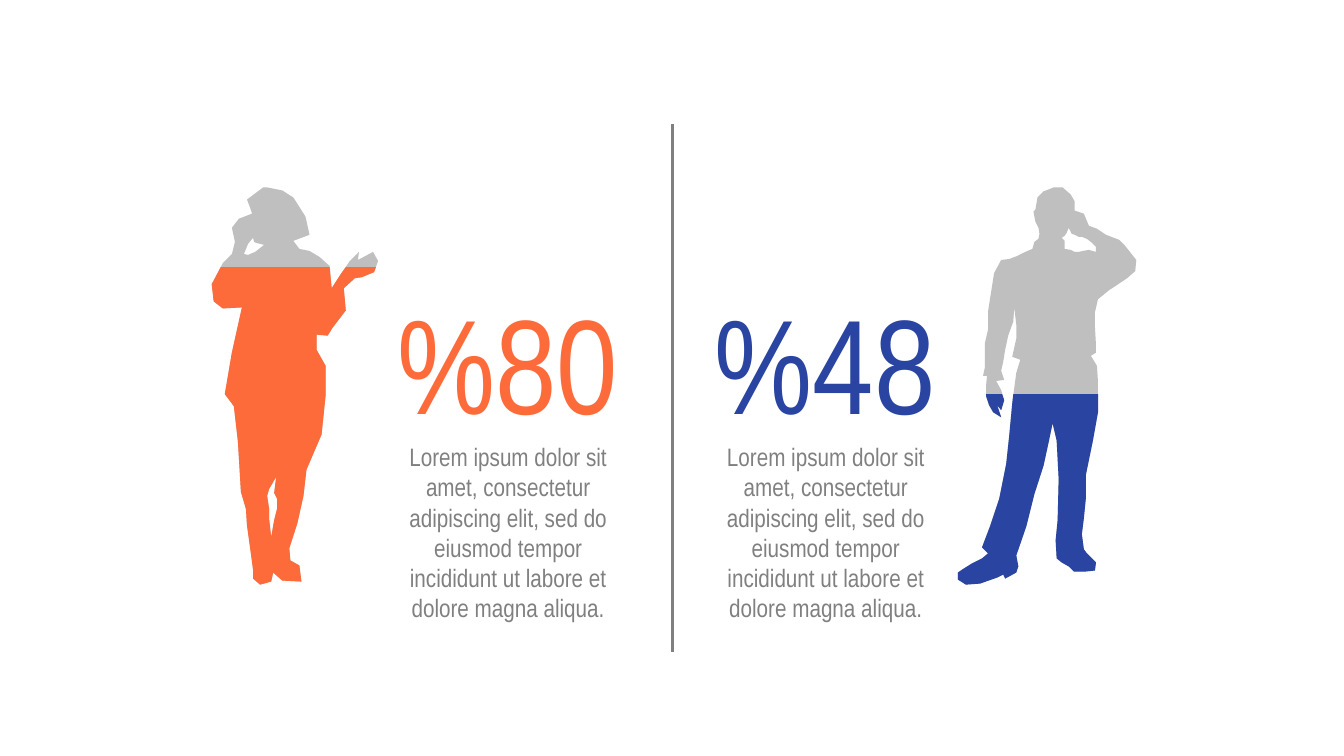
import pptx
import pptx.dml.color
import pptx.enum.shapes
import pptx.enum.text
import pptx.oxml
import pptx.util
from pptx.util import Inches

ORANGE = pptx.dml.color.RGBColor(0xFE, 0x6B, 0x3A)
BLUE = pptx.dml.color.RGBColor(0x29, 0x44, 0xA1)
SILVER = pptx.dml.color.RGBColor(0xBF, 0xBF, 0xBF)
GREY = pptx.dml.color.RGBColor(0x80, 0x80, 0x80)
FONT = "Arial Narrow"
OUTLINE_UNIT = Inches(0.01)
CAPTION = ("Lorem ipsum dolor sit amet, consectetur adipiscing elit, sed do "
           "eiusmod tempor incididunt ut labore et dolore magna aliqua.")

WOMAN_BODY = [
    (210, 282), (212, 299), (221, 306), (240, 305), (230, 350), (223, 391),
    (232, 403), (236, 438), (239, 488), (244, 505), (245, 521), (249, 550),
    (251, 565), (251, 574), (258, 580), (269, 577), (271, 568), (280, 576),
    (299, 577), (297, 561), (288, 556), (287, 544), (295, 519), (301, 492),
    (304, 466), (319, 431), (323, 392), (323, 363), (314, 347), (314, 332),
    (325, 333), (330, 325), (343, 308), (341, 286), (352, 276), (359, 275),
    (371, 270)]
WOMAN_TOP = [
    (375, 259), (370, 250), (355, 258), (356, 250), (347, 259), (338, 272),
    (329, 286), (327, 264), (317, 255), (307, 249), (297, 247), (291, 239),
    (307, 233), (303, 215), (291, 196), (280, 189), (265, 186), (261, 186),
    (245, 198), (248, 206), (250, 212), (237, 217), (230, 226), (233, 240),
    (230, 252), (221, 261)]
WOMAN_CUT = [(373, 265), (343, 265), (338, 272), (329, 286), (327, 265), (219, 265)]
WOMAN_LEG_GAP = [
    (274, 473), (272, 489), (275, 495), (275, 504), (272, 516), (269, 533),
    (268, 524), (267, 515), (267, 505), (265, 492), (267, 485)]
WOMAN_ARM_GAP = [
    (251, 236), (252, 240), (254, 241), (262, 243), (253, 250), (246, 253),
    (242, 252), (244, 247), (246, 242)]

MAN_LEGS = [
    (1089, 409), (1084, 437), (1077, 471), (1077, 494), (1075, 514), (1073, 530),
    (1075, 545), (1078, 549), (1087, 558), (1086, 566), (1077, 567), (1065, 567),
    (1060, 562), (1053, 558), (1048, 554), (1047, 536), (1049, 516), (1050, 475),
    (1048, 437), (1044, 420), (1040, 439), (1035, 462), (1026, 490), (1018, 522),
    (1008, 551), (1010, 562), (1008, 568), (997, 574), (995, 570), (989, 573),
    (972, 579), (958, 580), (950, 575), (950, 568), (956, 564), (964, 559),
    (974, 554), (980, 549), (974, 543), (982, 522), (991, 495), (998, 460),
    (1001, 432), (1004, 400)]
MAN_SIDE = [
    (1008, 370), (1012, 357), (1004, 354), (1008, 336), (1008, 322), (1006, 305),
    (1005, 319), (1000, 333), (997, 347), (995, 359), (993, 368), (996, 377),
    (988, 378), (993, 387)]
MAN_HAND = [(996, 397), (993, 407), (989, 402), (993, 414), (985, 409), (981, 402), (978, 393)]
MAN_TOP = [
    (978, 383), (979, 373), (975, 373), (977, 364), (977, 354), (977, 340),
    (980, 327), (980, 309), (986, 271), (993, 258), (1001, 257), (1009, 254),
    (1017, 250), (1024, 247), (1026, 240), (1030, 237), (1031, 232), (1030, 226),
    (1027, 220), (1025, 210), (1027, 208), (1028, 202), (1029, 196), (1035, 190),
    (1045, 186), (1054, 186), (1062, 193), (1066, 200), (1066, 209), (1075, 212),
    (1080, 224), (1088, 227), (1097, 233), (1110, 238), (1116, 244), (1127, 258),
    (1126, 269), (1118, 276), (1100, 288), (1089, 297), (1086, 310), (1086, 324),
    (1087, 341), (1087, 350), (1082, 353), (1088, 363), (1089, 378)]
MAN_ARM_GAP = [
    (1060, 226), (1058, 231), (1056, 234), (1053, 236), (1056, 239), (1056, 247),
    (1062, 248), (1066, 250), (1070, 250), (1074, 249), (1080, 248), (1087, 250),
    (1087, 245), (1082, 240), (1078, 237), (1073, 235), (1070, 235), (1066, 233),
    (1063, 232)]


def write_text(text_frame, text, *, size, color, anchor, side_inset=0.1):
    text_frame.word_wrap = True
    text_frame.auto_size = pptx.enum.text.MSO_AUTO_SIZE.SHAPE_TO_FIT_TEXT
    text_frame.vertical_anchor = anchor
    text_frame.margin_left = text_frame.margin_right = Inches(side_inset)
    paragraph = text_frame.paragraphs[0]
    paragraph.alignment = pptx.enum.text.PP_ALIGN.CENTER
    run = paragraph.add_run()
    run.text = text
    run.font.name = FONT
    run.font.size = pptx.util.Pt(size)
    run.font.color.rgb = color


class SlideBuilder:
    def __init__(self, slide):
        self.shapes = slide.shapes

    def silhouette(self, color, *contours):
        first, *others = contours
        builder = self.shapes.build_freeform(*first[0], scale=OUTLINE_UNIT)
        builder.add_line_segments(first[1:], close=True)
        for contour in others:
            builder.move_to(*contour[0])
            builder.add_line_segments(contour[1:], close=True)
        shape = builder.convert_to_shape()
        shape.shadow.inherit = False
        shape.fill.solid()
        shape.fill.fore_color.rgb = color
        shape.line.fill.background()

    def text(self, left, top, width, height, text, **text_format):
        box = self.shapes.add_textbox(Inches(left), Inches(top), Inches(width), Inches(height))
        write_text(box.text_frame, text, **text_format)

    def divider(self, x, top, bottom):
        connector = self.shapes.add_connector(
            pptx.enum.shapes.MSO_CONNECTOR.STRAIGHT,
            Inches(x), Inches(top), Inches(x), Inches(bottom))
        connector.line.color.rgb = GREY
        connector.line.width = pptx.util.Pt(1.5)
        properties = connector._element.spPr
        properties.append(pptx.oxml.parse_xml(
            '<a:effectLst xmlns:a="http://schemas.openxmlformats.org/drawingml/2006/main"/>'))

    def statistic(self, left, value, color):
        self.text(left, 2.71, 2.57, 1.72, value, size=96, color=color,
                  anchor=pptx.enum.text.MSO_ANCHOR.BOTTOM)
        self.text(left + 0.04, 4.32, 2.5, 1.92, CAPTION, size=18, color=GREY,
                  anchor=pptx.enum.text.MSO_ANCHOR.MIDDLE, side_inset=0.2)


def main():
    presentation = pptx.Presentation()
    presentation.slide_width = Inches(13.33)
    presentation.slide_height = Inches(7.5)
    builder = SlideBuilder(presentation.slides.add_slide(presentation.slide_layouts[6]))

    builder.silhouette(SILVER, WOMAN_BODY + WOMAN_TOP, WOMAN_LEG_GAP, WOMAN_ARM_GAP)
    builder.silhouette(SILVER, MAN_LEGS + MAN_SIDE + MAN_HAND + MAN_TOP, MAN_ARM_GAP)
    builder.silhouette(ORANGE, WOMAN_BODY + WOMAN_CUT, WOMAN_LEG_GAP)
    builder.silhouette(BLUE, MAN_LEGS + [(1005, 391), (1089, 391)],
                       MAN_HAND + [(978, 391), (994, 391)])
    builder.statistic(3.75, "%80", ORANGE)
    builder.statistic(6.9, "%48", BLUE)
    builder.divider(6.67, 1.23, 6.47)
    presentation.save("out.pptx")


if __name__ == "__main__":
    main()
